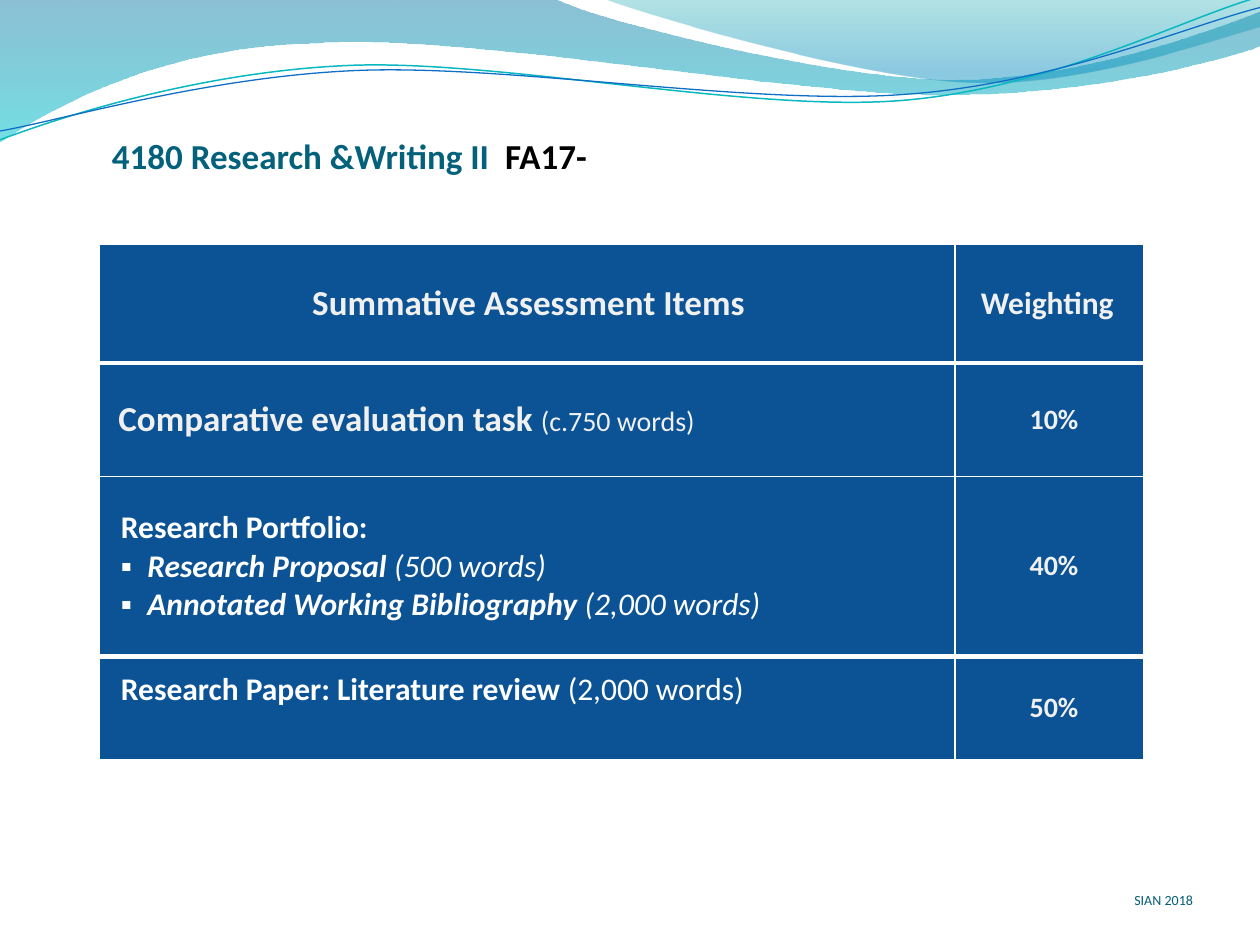
"""Build the slide with the summative assessment table under a wave banner."""
import pptx
import pptx.dml.color
import pptx.enum.text
import pptx.oxml
import pptx.oxml.ns
import pptx.util
from lxml import etree

Inches, Pt = pptx.util.Inches, pptx.util.Pt
rgb = pptx.dml.color.RGBColor.from_string
qn = pptx.oxml.ns.qn
PP_ALIGN, MSO_ANCHOR = pptx.enum.text.PP_ALIGN, pptx.enum.text.MSO_ANCHOR
PALE, BLUE, RULE = "F0F0F0", "0B5394", "FFFFFF"


def trace(shapes, segments, close):
    """Draw points and cubic curves, given in inches, as one outline."""
    points = [(Inches(seg[n]), Inches(seg[n + 1]))
              for seg in segments for n in range(0, len(seg), 2)]
    builder = shapes.build_freeform(*points[0])
    builder.add_line_segments(points[1:], close=close)
    s = builder.convert_to_shape()
    s.shadow.inherit = False
    lines = iter(list(s._element.spPr.iter(qn("a:lnTo"))))
    for seg in segments[1:]:
        first = next(lines)
        if len(seg) == 6:
            curve = etree.Element(qn("a:cubicBezTo"))
            first.addprevious(curve)
            for line in (first, next(lines), next(lines)):
                curve.append(line[0])
                line.getparent().remove(line)
    return s


def write(p, runs, align=PP_ALIGN.LEFT):
    """Fill a paragraph with runs of text, size, colour, bold and italic."""
    p.alignment = align
    for text, size, color, bold, italic in runs:
        r = p.add_run()
        r.text = text
        r.font.name = "Calibri"
        r.font.size = Pt(size)
        r.font.color.rgb = rgb(color)
        r.font.bold, r.font.italic = bold, italic


prs = pptx.Presentation()
prs.slide_width, prs.slide_height = Inches(10), Inches(7.5)
slide = prs.slides.add_slide(prs.slide_layouts[6])

waves = [
    ([(0, 0), (4.4, -0.01), (4.76, 0.17, 6.64, 0.63, 7.58, 0.63),
      (8.53, 0.63, 9.58, 0.26, 10, 0.09), (10.01, 0.36),
      (9.83, 0.44, 8.7, 0.76, 7.46, 0.75), (6.22, 0.75, 3.82, 0.28, 2.57, 0.34),
      (1.29, 0.36, 0.46, 0.83, -0.01, 1.13)],
     [(0, "0074A1", 45), (1, "00C6CF", 55)]),
    ([(4.79, -0.01), (5.09, 0.11, 6.82, 0.62, 7.69, 0.65),
      (8.56, 0.69, 9.61, 0.32, 10, 0.21), (10, 0)],
     [(0, "00A1A9", 30), (0.8, "008BBF", 45)]),
]
for segments, stops in waves:
    s = trace(slide.shapes, segments, True)
    s.line.fill.background()
    s.fill.gradient()
    s.fill.gradient_angle = 270
    for stop, (position, color, _) in zip(s.fill.gradient_stops, stops):
        stop.position = position
        stop.color.rgb = rgb(color)
    colors = s._element.spPr.iter(qn("a:srgbClr"))
    for node, (_, _, opacity) in zip(colors, stops):
        etree.SubElement(node, qn("a:alpha"), val=str(opacity * 1000))

strands = [
    ([(0, 1.11), (0.48, 0.93, 1.58, 0.57, 2.77, 0.52),
      (3.95, 0.47, 5.93, 0.89, 7.13, 0.8), (8.33, 0.71, 9.38, 0.15, 9.98, -0.02)],
     "0AB8BF", 0.85),
    ([(0, 1.04), (0.47, 0.96, 1.64, 0.61, 2.83, 0.56),
      (4.03, 0.51, 5.97, 0.84, 7.17, 0.75), (8.36, 0.67, 9.41, 0.21, 10, 0.06)],
     "0F6FC6", 0.75),
]
for segments, color, width in strands:
    s = trace(slide.shapes, segments, False)
    s.fill.background()
    s.line.color.rgb = rgb(color)
    s.line.width = Pt(width)

title = slide.shapes.add_textbox(Inches(0.79), Inches(1.02), Inches(4), Inches(0.44))
title.text_frame.word_wrap = False
write(title.text_frame.paragraphs[0], [
    ("4180 Research &Writing II  ", 20, "04617B", True, False),
    ("FA17-", 20, "000000", True, False)])

widths, heights = [6.79, 1.5], [0.94, 0.9, 1.43, 0.82]
rules = [1, 3, 1, 3, 1]
items = [
    [[("Summative Assessment Items", 20, PALE, True, False)]],
    [[("Comparative evaluation task ", 20, PALE, True, False),
      ("(c.750 words)", 16, PALE, False, False)]],
    [[("Research Portfolio:", 18, RULE, True, False)],
     [("Research Proposal ", 18, RULE, True, True),
      ("(500 words)", 18, RULE, False, True)],
     [("Annotated Working Bibliography ", 18, RULE, True, True),
      ("(2,000 words)", 18, RULE, False, True)]],
    [[("Research Paper: Literature review ", 18, RULE, True, False),
      ("(2,000 words)", 18, RULE, False, False)]],
]
weights = [("Weighting ", 18), ("10%", 16), ("40%", 16), ("50%", 16)]
indents = [(0.02, 0.02), (0.08, 0.07), (0.31, 0.07), (0.1, 0.07)]

table = slide.shapes.add_table(4, 2, Inches(0.79), Inches(1.94),
                               Inches(sum(widths)), Inches(sum(heights))).table
for column, width in zip(table.columns, widths):
    column.width = Inches(width)
for i, height in enumerate(heights):
    table.rows[i].height = Inches(height)
    weight, size = weights[i]
    contents = [items[i], [[(weight, size, PALE, True, False)]]]
    for j, paragraphs in enumerate(contents):
        cell = table.cell(i, j)
        cell.vertical_anchor = MSO_ANCHOR.MIDDLE
        cell.margin_left = cell.margin_right = Inches(0.07)
        cell.margin_top = cell.margin_bottom = 0
        tcPr = cell._tc.get_or_add_tcPr()
        for side, width in zip("LRTB", (1, 1, rules[i], rules[i + 1])):
            ln = etree.SubElement(tcPr, qn("a:ln" + side), w=str(Pt(width)))
            fill = etree.SubElement(ln, qn("a:solidFill"))
            etree.SubElement(fill, qn("a:srgbClr"), val=RULE)
        cell.fill.solid()
        cell.fill.fore_color.rgb = rgb(BLUE)
        tf = cell.text_frame
        for k, runs in enumerate(paragraphs):
            p = tf.add_paragraph() if k else tf.paragraphs[0]
            write(p, runs, PP_ALIGN.CENTER if i == 0 or j == 1 else PP_ALIGN.LEFT)
            pPr = p._p.get_or_add_pPr()
            pPr.set("marL", str(Inches(indents[i][j])))
            pPr.set("indent", str(Inches(-0.21 if len(paragraphs) > 1 else 0)))
            if k:
                etree.SubElement(pPr, qn("a:buFont"), typeface="Calibri")
                etree.SubElement(pPr, qn("a:buChar"), char="▪")
table.cell(3, 0).margin_bottom = Inches(0.29)

footer = slide.shapes.add_textbox(Inches(5.8), Inches(6.81), Inches(3.67), Inches(0.4))
tf = footer.text_frame
tf.word_wrap = True
tf.vertical_anchor = MSO_ANCHOR.BOTTOM
tf.margin_left = tf.margin_right = tf.margin_top = tf.margin_bottom = 0
write(tf.paragraphs[0], [("SIAN 2018", 8, "045D75", False, False)], PP_ALIGN.RIGHT)

prs.save("out.pptx")
